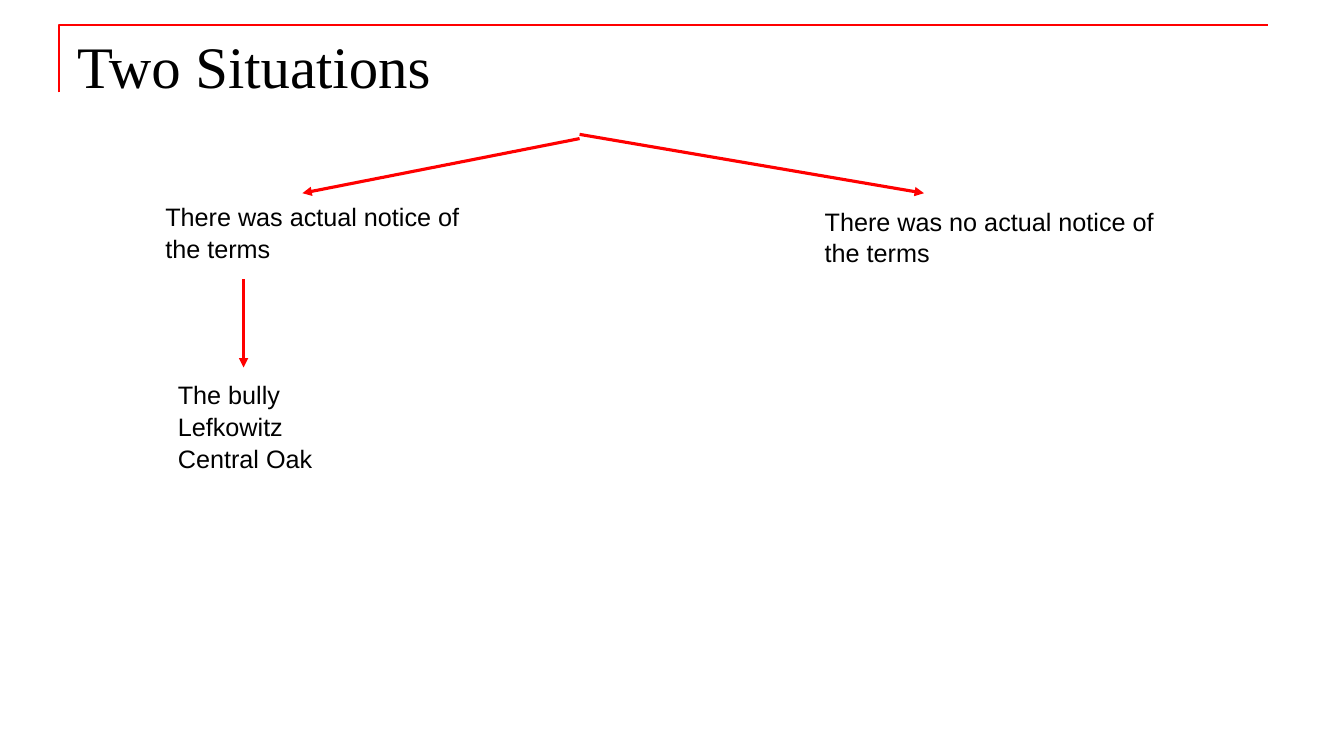
from dataclasses import dataclass

from lxml.etree import SubElement
from pptx import Presentation
from pptx.dml.color import RGBColor
from pptx.enum.shapes import MSO_CONNECTOR
from pptx.oxml.ns import qn
from pptx.util import Inches, Pt

CELL = Inches(1) / 12  # grid of 160 columns by 90 rows
RED, BLACK = "FF0000", "000000"


@dataclass
class Label:
    col: float
    row: float
    cols: float
    rows: float
    lines: list[str]
    size: float = 18
    font: str = "Arial"
    spacing: float = 1.05
    top_inset: float = 0.6


@dataclass
class Arrow:
    start: tuple[float, float]
    end: tuple[float, float]


LABELS = [
    Label(8, 2, 144, 15, ["Two Situations"], 42, "Times New Roman", 1, 1.5),
    Label(18.5, 23.25, 41, 8.5, ["There was actual notice of the terms"]),
    Label(97, 23.75, 44, 8.5, ["There was no actual notice of the terms"]),
    Label(20, 44.4, 25, 12, ["The bully", "Lefkowitz", "Central Oak"]),
]
ARROWS = [
    Arrow((69, 16.5), (36, 23)),
    Arrow((69, 16), (110, 23)),
    Arrow((29, 33.25), (29, 43.75)),
]
CORNER = [(6.75, 11), (6.75, 3), (150.75, 3)]


def grid(cells: float) -> int:
    return round(cells * CELL)


def color(code: str) -> RGBColor:
    return RGBColor.from_string(code)


def add_label(s, label: Label) -> None:
    box = (label.col, label.row, label.cols, label.rows)
    tf = s.shapes.add_textbox(*map(grid, box)).text_frame
    tf.word_wrap = True
    tf.margin_top = grid(label.top_inset)
    tf.text = "\n".join(label.lines)
    for p in tf.paragraphs:
        p.line_spacing = label.spacing
        p.font.size = Pt(label.size)
        p.font.name = label.font
        p.font.color.rgb = color(BLACK)


def add_arrow(s, arrow: Arrow) -> None:
    ends = map(grid, arrow.start + arrow.end)
    line = s.shapes.add_connector(MSO_CONNECTOR.STRAIGHT, *ends)
    line.line.color.rgb = color(RED)
    line.line.width = Pt(2.25)
    SubElement(line.line._get_or_add_ln(), qn("a:tailEnd"), type="triangle")
    SubElement(line._element.spPr, qn("a:effectLst"))


def add_corner(s) -> None:
    first, *rest = CORNER
    builder = s.shapes.build_freeform(*first, scale=CELL)
    builder.add_line_segments(rest, close=False)
    sp = builder.convert_to_shape()
    sp.shadow.inherit = False
    sp.fill.background()
    sp.line.color.rgb = color(RED)
    sp.line.width = Pt(1.5)


def main() -> None:
    prs = Presentation()
    prs.slide_width, prs.slide_height = grid(160), grid(90)
    s = prs.slides.add_slide(prs.slide_layouts[6])

    # Red corner rule behind the title
    add_corner(s)

    # Title and situations
    for label in LABELS:
        add_label(s, label)

    # Arrows of the tree
    for arrow in ARROWS:
        add_arrow(s, arrow)

    prs.save("out.pptx")


if __name__ == "__main__":
    main()
